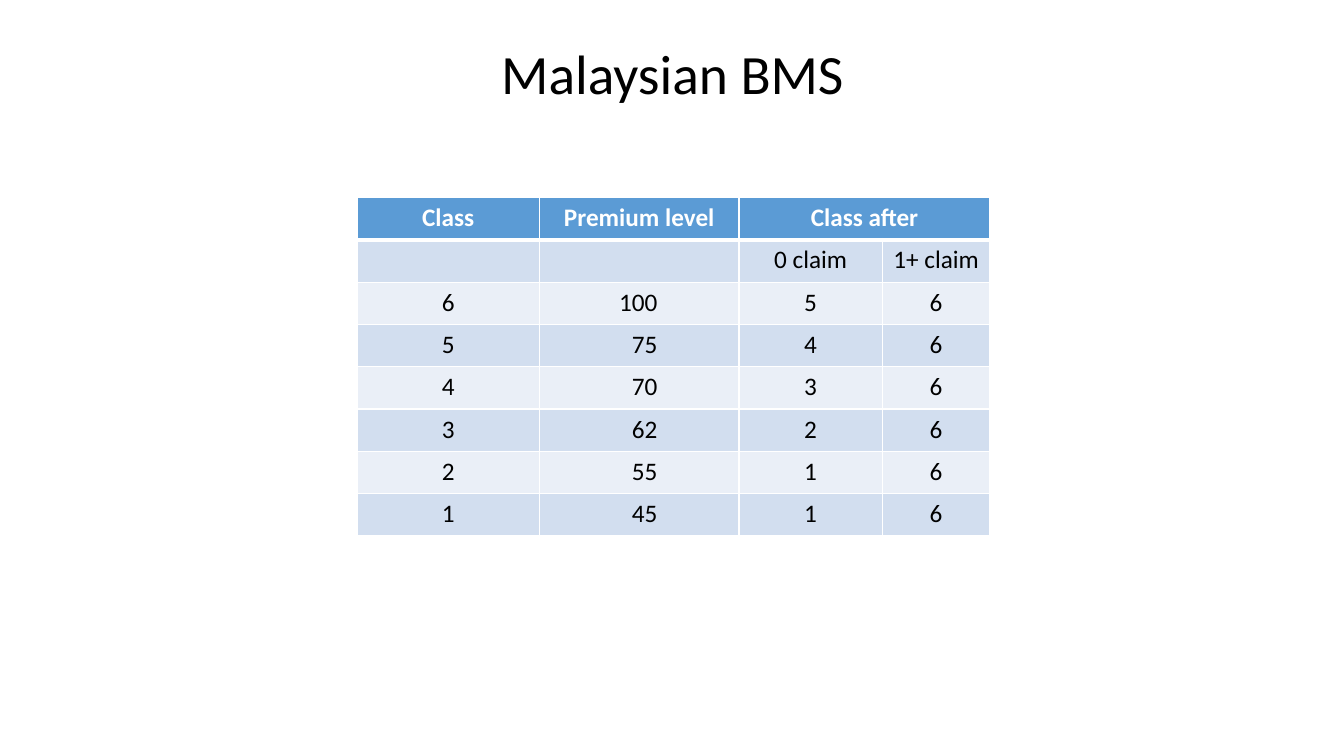
from lxml import etree
from pptx import Presentation
from pptx import util as u
from pptx.dml.color import RGBColor
from pptx.enum import text
from pptx.oxml.ns import qn

TITLE = "Malaysian BMS"
HEADER = ("Class", "Premium level", "Class after", "")
SUBHEADER = ("", "", "0 claim", "1+ claim")
CLASSES = [
    ("6", "100", "5", "6"),
    ("5", "75", "4", "6"),
    ("4", "70", "3", "6"),
    ("3", "62", "2", "6"),
    ("2", "55", "1", "6"),
    ("1", "45", "1", "6"),
]
COLUMN_WIDTHS = (1.81, 1.98, 1.42, 1.07)
ROW_HEIGHT = 0.42
TABLE_LEFT, TABLE_TOP = 3.54, 1.96
PREMIUM_COLUMN, PREMIUM_INSET = 1, 0.81
HEADER_FILL, BAND_FILLS = "5B9BD5", ("EAEFF7", "D2DEEF")
BLACK, WHITE = "000000", "FFFFFF"
CENTER, RIGHT = text.PP_ALIGN.CENTER, text.PP_ALIGN.RIGHT


def color(value):
    return RGBColor.from_string(value)


def write(frame, words, size=18, fill=BLACK, bold=False, align=CENTER, spacing=1.0):
    paragraph = frame.paragraphs[0]
    paragraph.alignment = align
    paragraph.line_spacing = spacing
    paragraph.font.size = u.Pt(size)
    if words:
        run = paragraph.add_run()
        run.text = words
        run.font.name = "Calibri"
        run.font.size = u.Pt(size)
        run.font.bold = bold
        run.font.color.rgb = color(fill)


def add_borders(cell, top, bottom):
    properties = cell._tc.get_or_add_tcPr()
    sides = (("a:lnL", 1), ("a:lnR", 1), ("a:lnT", top), ("a:lnB", bottom))
    for position, (tag, width) in enumerate(sides):
        line = etree.Element(qn(tag), w=str(u.Pt(width)))
        fill = etree.SubElement(line, qn("a:solidFill"))
        etree.SubElement(fill, qn("a:srgbClr"), val=WHITE)
        properties.insert(position, line)


def add_title(slide):
    box = slide.shapes.add_textbox(u.Inches(0.92), u.Inches(0.4), u.Inches(11.5), u.Inches(0.71))
    frame = box.text_frame
    frame.word_wrap = True
    frame.vertical_anchor = text.MSO_ANCHOR.MIDDLE
    write(frame, TITLE, size=39.6, spacing=0.9)


def add_class_table(slide):
    rows = [HEADER, SUBHEADER, *CLASSES]
    frame = slide.shapes.add_table(
        len(rows), len(COLUMN_WIDTHS), u.Inches(TABLE_LEFT), u.Inches(TABLE_TOP),
        u.Inches(sum(COLUMN_WIDTHS)), u.Inches(ROW_HEIGHT * len(rows)))
    table = frame.table
    for column, width in zip(table.columns, COLUMN_WIDTHS):
        column.width = u.Inches(width)
    for row_index, row in enumerate(rows):
        table.rows[row_index].height = u.Inches(ROW_HEIGHT)
        is_header = row_index == 0
        for column_index, words in enumerate(row):
            cell = table.cell(row_index, column_index)
            is_premium = row_index > 1 and column_index == PREMIUM_COLUMN
            if is_premium:
                cell.margin_right = u.Inches(PREMIUM_INSET)
            cell.fill.solid()
            cell.fill.fore_color.rgb = color(HEADER_FILL if is_header else BAND_FILLS[row_index % 2])
            add_borders(cell, top=3 if row_index == 1 else 1, bottom=3 if is_header else 1)
            write(cell.text_frame, words, fill=WHITE if is_header else BLACK,
                  bold=is_header, align=RIGHT if is_premium else CENTER)
    table.cell(0, 2).merge(table.cell(0, 3))


def main():
    presentation = Presentation()
    presentation.slide_width = u.Inches(13.33)
    presentation.slide_height = u.Inches(7.5)
    slide = presentation.slides.add_slide(presentation.slide_layouts[6])
    add_title(slide)
    add_class_table(slide)
    presentation.save("out.pptx")


if __name__ == "__main__":
    main()
